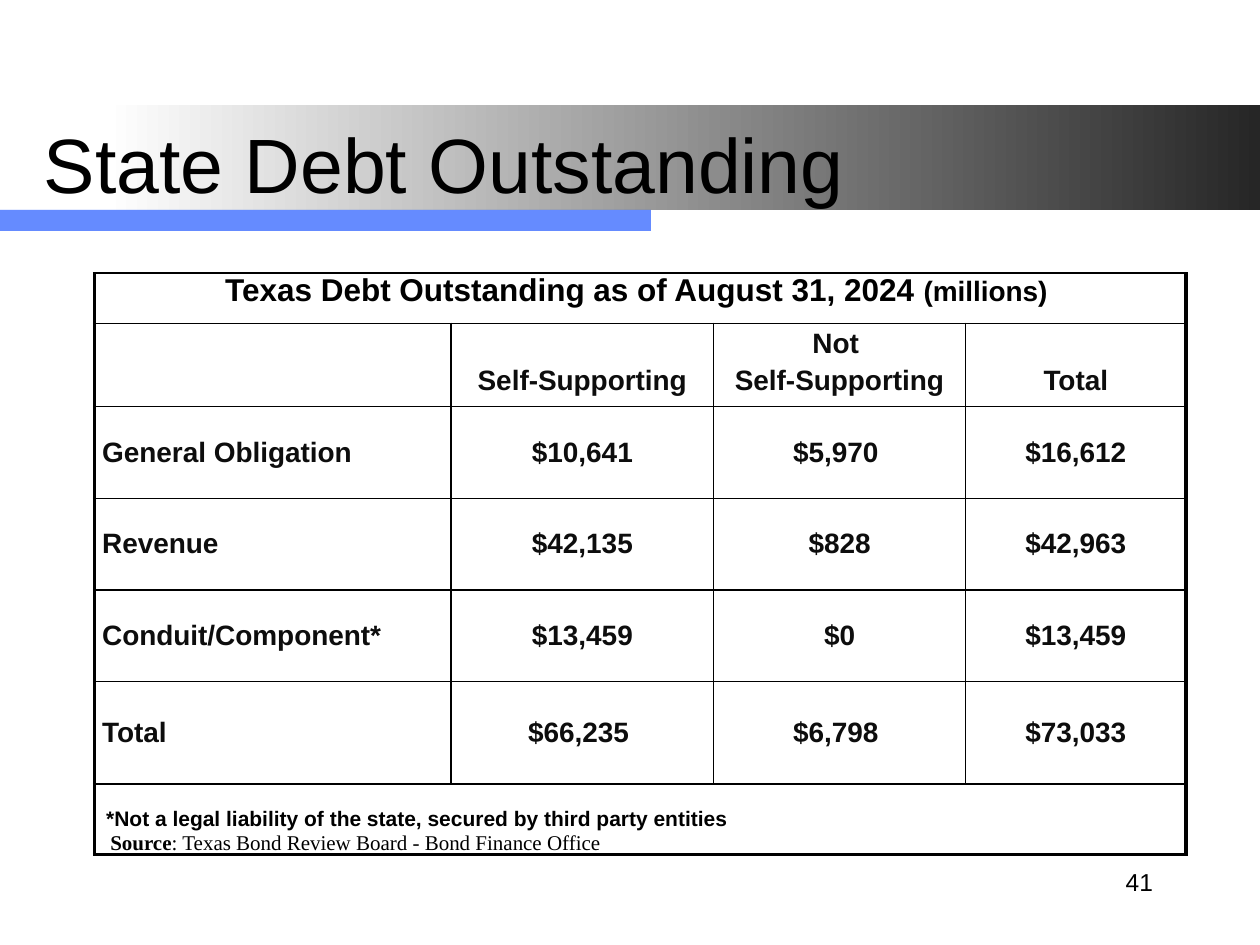
from dataclasses import dataclass

from lxml import etree
from pptx import Presentation
from pptx.dml.color import RGBColor
from pptx.enum import shapes, text
from pptx.oxml.ns import qn
from pptx.util import Pt

COLORS = {"black": "000000", "ink": "0D0D0D", "white": "FFFFFF",
          "dark": "262626", "blue": "3366FF"}
LEFT, CENTER, RIGHT = (text.PP_ALIGN.LEFT, text.PP_ALIGN.CENTER,
                       text.PP_ALIGN.RIGHT)
TOP, MIDDLE, BOTTOM = (text.MSO_ANCHOR.TOP, text.MSO_ANCHOR.MIDDLE,
                       text.MSO_ANCHOR.BOTTOM)


@dataclass
class Run:
    text: str
    size: float = 16
    bold: bool = True
    color: str = "ink"
    name: str = "Arial"


@dataclass
class Para:
    runs: list[Run]
    align: text.PP_ALIGN = CENTER
    indent: float = 0
    before: float = 0


@dataclass
class Box:
    left: float
    top: float
    width: float
    height: float

    def lengths(self) -> list:
        return [Pt(v) for v in (self.left, self.top, self.width, self.height)]


def write(tf, paras: list[Para]) -> None:
    for i, para in enumerate(paras):
        p = tf.paragraphs[0] if i == 0 else tf.add_paragraph()
        p.alignment, p.space_before = para.align, Pt(para.before)
        if para.indent:
            p._p.get_or_add_pPr().set("marL", str(Pt(para.indent)))
        for run in para.runs:
            r = p.add_run()
            r.text = run.text
            fmt = {"size": Pt(run.size), "bold": run.bold, "name": run.name}
            for key, value in fmt.items():
                setattr(r.font, key, value)
            r.font.color.rgb = RGBColor.from_string(COLORS[run.color])


def add_bar(s, box: Box):
    sp = s.shapes.add_shape(shapes.MSO_SHAPE.RECTANGLE, *box.lengths())
    sp.shadow.inherit = False
    sp.line.fill.background()
    return sp


def add_text(s, box: Box, para: Para, wrap: bool) -> None:
    tf = s.shapes.add_textbox(*box.lengths()).text_frame
    tf.word_wrap, tf.vertical_anchor = wrap, MIDDLE
    write(tf, [para])


def set_borders(cell, widths: dict[str, float]) -> None:
    tc_pr = cell._tc.get_or_add_tcPr()
    for side, width in widths.items():
        ln = etree.SubElement(tc_pr, qn(f"a:ln{side}"), w=str(Pt(width)))
        fill = etree.SubElement(ln, qn("a:solidFill"))
        etree.SubElement(fill, qn("a:srgbClr"), val=COLORS["black"])


def fill_cell(cell, paras: list[Para], anchor=MIDDLE, bottom: float = 0) -> None:
    fmt = {"margin_left": 0, "margin_top": 0, "margin_right": 0,
           "margin_bottom": Pt(bottom), "vertical_anchor": anchor}
    for key, value in fmt.items():
        setattr(cell, key, value)
    write(cell.text_frame, paras)


HEADS = [["Self-Supporting"], ["Not ", "Self-Supporting"], ["Total"]]
DEBT = [
    ("General Obligation", "$10,641", "$5,970 ", "$16,612"),
    ("Revenue", "$42,135", "$828", "$42,963"),
    ("Conduit/Component*", "$13,459", "$0", "$13,459"),
    ("Total", "$66,235 ", "$6,798 ", "$73,033"),
]
COLS = [203.8, 150, 144, 126]
ROWS = [28.8, 45.5, 52.4, 52.4, 52.4, 58.4, 40.5]


def add_debt_table(s) -> None:
    box = Box(54, 156, sum(COLS), sum(ROWS))
    table = s.shapes.add_table(len(ROWS), len(COLS), *box.lengths()).table
    table.first_row = table.horz_banding = False
    for col, width in zip(table.columns, COLS):
        col.width = Pt(width)
    for row, height in zip(table.rows, ROWS):
        row.height = Pt(height)

    # Frame: heavy outside, light inside
    last_row, last_col = len(ROWS) - 1, len(COLS) - 1
    for i in range(len(ROWS)):
        merged = i in (0, last_row)
        for j in range(len(COLS)):
            cell = table.cell(i, j)
            set_borders(cell, {"L": 2.25 if j == 0 else 1,
                               "R": 2.25 if j == last_col or merged else 1,
                               "T": 1, "B": 2.25 if i == last_row else 1})
            cell.fill.background()
        if merged:
            table.cell(i, 0).merge(table.cell(i, last_col))

    # Heading and column heads
    fill_cell(table.cell(0, 0), [Para([
        Run("Texas Debt Outstanding as of August 31, 2024 ", 18, color="black"),
        Run("(millions) ", color="black")])], TOP)
    for j, lines in enumerate(HEADS, 1):
        fill_cell(table.cell(1, j),
                  [Para([Run(t)], before=3.2 if k else 0)
                   for k, t in enumerate(lines)], BOTTOM, 6)

    # Figures
    for i, (label, *values) in enumerate(DEBT, 2):
        fill_cell(table.cell(i, 0), [Para([Run(label)], LEFT, indent=4.4)])
        for j, value in enumerate(values, 1):
            fill_cell(table.cell(i, j), [Para([Run(value)])])

    # Footnotes
    serif = {"size": 12, "color": "black", "name": "Times New Roman"}
    note = "*Not a legal liability of the state, secured by third party entities"
    fill_cell(table.cell(last_row, 0), [
        Para([Run(note, 12, color="black")], LEFT, indent=6.7),
        Para([Run("Source", **serif),
              Run(": Texas Bond Review Board - Bond Finance Office",
                  bold=False, **serif)], LEFT, indent=9)], BOTTOM)


def main() -> None:
    prs = Presentation()
    prs.slide_width, prs.slide_height = Pt(720), Pt(540)
    s = prs.slides.add_slide(prs.slide_layouts[6])

    # Gradient band
    band = add_bar(s, Box(60, 60, 660, 60))
    band.fill.gradient()
    band.fill.gradient_angle = 0
    for stop, color, pos in zip(band.fill.gradient_stops, ("white", "dark"), (0, 1)):
        stop.color.rgb = RGBColor.from_string(COLORS[color])
        stop.position = pos

    # Two translucent layers of the blue accent
    for _ in range(2):
        accent = add_bar(s, Box(0, 120, 372, 12))
        accent.fill.solid()
        accent.fill.fore_color.rgb = RGBColor.from_string(COLORS["blue"])
        clr = accent._element.spPr.find(qn("a:solidFill"))[0]
        etree.SubElement(clr, qn("a:alpha"), val="50000")

    # Page number, title and table
    add_text(s, Box(516, 486, 150, 36),
             Para([Run("41", 14, False, "black")], RIGHT), False)
    add_text(s, Box(18, 48, 648, 90),
             Para([Run("State Debt Outstanding", 44, False, "black")], LEFT), True)
    add_debt_table(s)
    prs.save("out.pptx")


if __name__ == "__main__":
    main()
